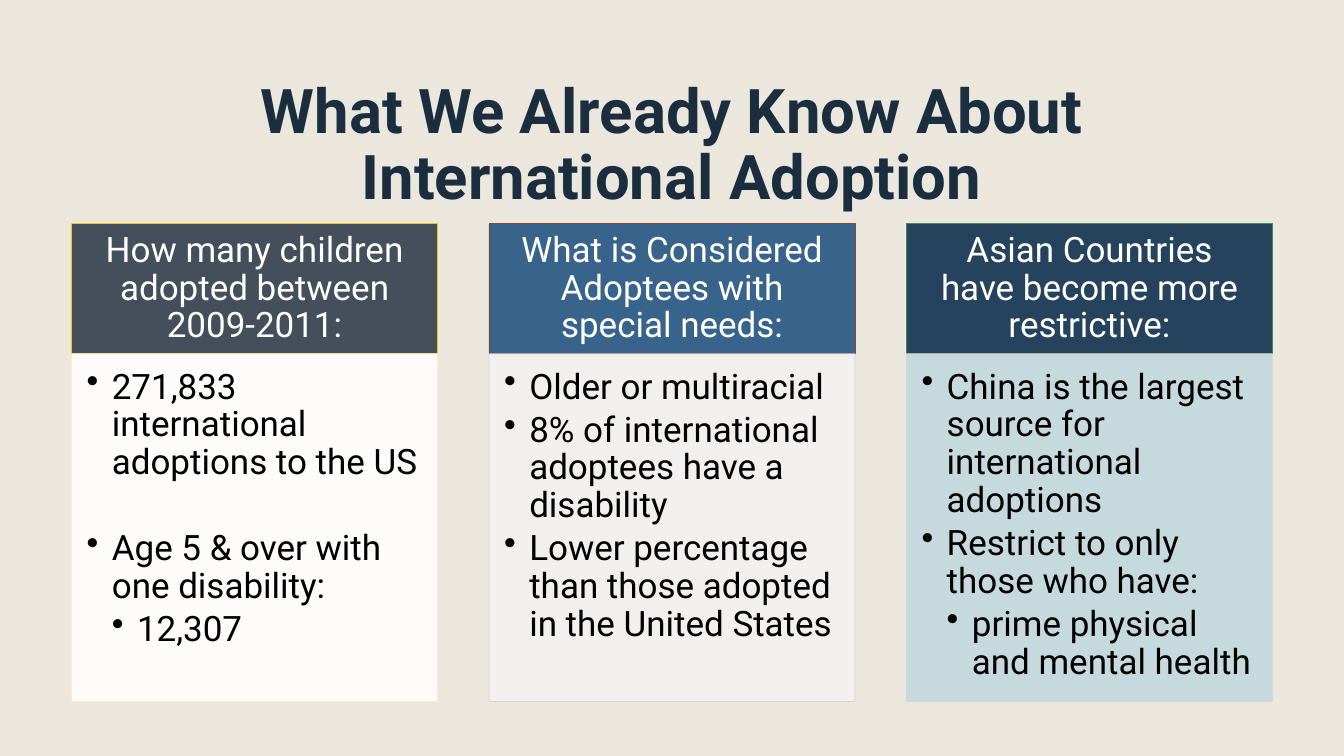
from lxml.etree import SubElement
from pptx import Presentation
from pptx.dml.color import RGBColor
from pptx.enum.shapes import MSO_SHAPE as Shape
from pptx.enum.text import MSO_ANCHOR as Anchor, PP_ALIGN as Align
from pptx.oxml.ns import qn
from pptx.util import Inches, Pt

COLORS = {
    "background": "EBE7DD",
    "title": "1A2E40",
    "header_text": "FFFFFF",
    "body_text": "000000",
}
LEFT, COLUMN_WIDTH, COLUMN_STEP = 0.71, 3.63, 4.14
HEADER_TOP, HEADER_HEIGHT, BODY_HEIGHT = 2.22, 1.29, 3.45
INDENT = 0.25
BLANK_LINE = 30.7

COLUMNS = [
    {
        "header": "How many children adopted between 2009-2011:",
        "header_colors": ("454F5B", "F2C418"),
        "body_colors": ("FFFFFF", "FAEACC"),
        "bullets": [
            (1, 0, "271,833 international adoptions to the US"),
            (1, BLANK_LINE, "Age 5 & over with one disability:"),
            (2, 0, "12,307"),
        ],
    },
    {
        "header": "What is Considered Adoptees with special needs:",
        "header_colors": ("38648B", "87492C"),
        "body_colors": ("F2F2F2", "D9D0CD"),
        "bullets": [
            (1, 0, "Older or multiracial"),
            (1, 0, "8% of international adoptees have a disability"),
            (1, 0, "Lower percentage than those adopted in the United States"),
        ],
    },
    {
        "header": "Asian Countries have become more restrictive:",
        "header_colors": ("26435E", "4A845E"),
        "body_colors": ("C3D9DD", "D0D9D2"),
        "bullets": [
            (1, 0, "China is the largest source for international adoptions"),
            (1, 0, "Restrict to only those who have:"),
            (2, 0, "prime physical and mental health"),
        ],
    },
]


def add_panel(left, top, height, colors, insets, anchor):
    box = slide.shapes.add_shape(
        Shape.RECTANGLE, Inches(left), Inches(top), Inches(COLUMN_WIDTH), Inches(height)
    )
    box.shadow.inherit = False
    box.fill.solid()
    box.line.width = Pt(0.5)
    for color, value in zip((box.fill.fore_color, box.line.color), colors):
        color.rgb = RGBColor.from_string(value)
    frame = box.text_frame
    frame.word_wrap = True
    frame.vertical_anchor = anchor
    frame.margin_left, frame.margin_top, frame.margin_right, frame.margin_bottom = map(Inches, insets)
    return box


def format_text(para, size, color, spacing, align):
    para.alignment = align
    para.line_spacing = spacing
    para.font.name = "Roboto"
    para.font.size = Pt(size)
    para.font.color.rgb = RGBColor.from_string(COLORS[color])


deck = Presentation()
deck.slide_width, deck.slide_height = Inches(13.33), Inches(7.5)
slide = deck.slides.add_slide(deck.slide_layouts[5])
slide.background.fill.solid()
slide.background.fill.fore_color.rgb = RGBColor.from_string(COLORS["background"])

title = slide.shapes.title
title.left, title.top, title.width, title.height = map(Inches, (0.7, 0.75, 11.93, 1.62))
title.text_frame.text = "What We Already Know About International Adoption"
title.text_frame.word_wrap = True
title.text_frame.vertical_anchor = Anchor.TOP
title_para = title.text_frame.paragraphs[0]
format_text(title_para, 44, "title", 0.89, Align.CENTER)
title_para.font.bold = True

for index, column in enumerate(COLUMNS):
    left = LEFT + index * COLUMN_STEP
    header = add_panel(
        left, HEADER_TOP, HEADER_HEIGHT, column["header_colors"], (0.19, 0.11, 0.19, 0.11), Anchor.MIDDLE
    )
    header.text_frame.text = column["header"]
    format_text(header.text_frame.paragraphs[0], 25, "header_text", 0.9, Align.CENTER)

    body = add_panel(
        left, HEADER_TOP + HEADER_HEIGHT, BODY_HEIGHT, column["body_colors"], (0.15, 0.15, 0.19, 0.22), Anchor.TOP
    )
    for color in body.element.spPr.iter(qn("a:srgbClr")):
        SubElement(color, qn("a:alpha"), val="90000")
    frame = body.text_frame
    for number, (level, space_before, text) in enumerate(column["bullets"]):
        para = frame.add_paragraph() if number else frame.paragraphs[0]
        para.text = text
        para.level = level
        properties = para._p.get_or_add_pPr()
        properties.set("marL", str(Inches(level * INDENT)))
        properties.set("indent", str(-Inches(INDENT)))
        SubElement(properties, qn("a:buChar"), char="•")
        para.space_before = Pt(space_before)
        para.space_after = Pt(3.75)
        format_text(para, 25, "body_text", 0.9, Align.LEFT)

deck.save("out.pptx")
